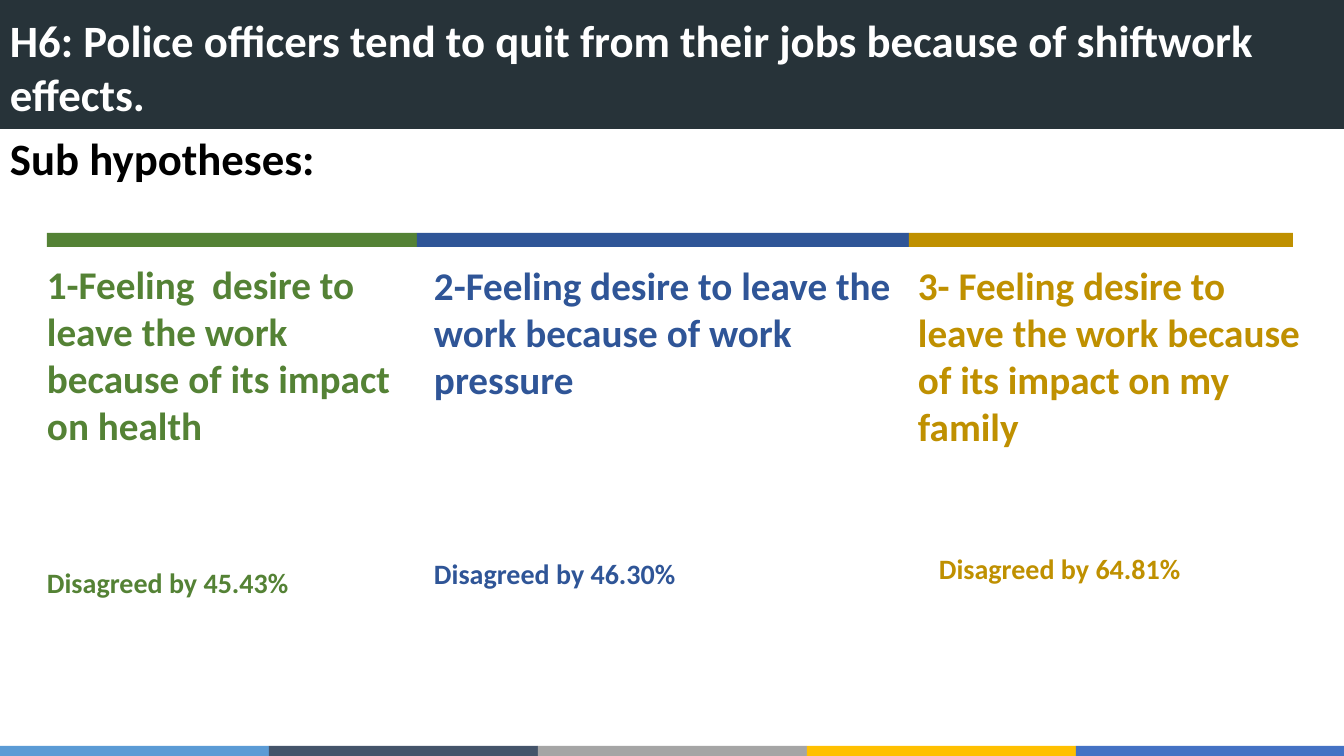
"""Builds the slide on hypothesis H6 and its three sub hypotheses."""
import pptx
import pptx.dml.color
import pptx.enum.shapes
import pptx.util

EMU_PER_PX = 12192000 / 1344


def add_bar(left, top, width, height, color):
    bar = slide.shapes.add_shape(
        pptx.enum.shapes.MSO_SHAPE.RECTANGLE,
        *[round(n * EMU_PER_PX) for n in (left, top, width, height)])
    bar.shadow.inherit = False
    bar.fill.solid()
    bar.fill.fore_color.rgb = pptx.dml.color.RGBColor.from_string(color)
    bar.line.fill.background()


def add_text(left, top, width, height, lines, color, wrap=True, inset=None):
    box = slide.shapes.add_textbox(
        *[round(n * EMU_PER_PX) for n in (left, top, width, height)])
    frame = box.text_frame
    frame.word_wrap = wrap
    if inset is not None:
        frame.margin_left = frame.margin_top = frame.margin_bottom = 0
        frame.margin_right = round(inset * EMU_PER_PX)
    frame.text = "\n".join(text for text, size, gap in lines)
    for paragraph, (text, size, gap) in zip(frame.paragraphs, lines):
        if gap:
            paragraph.space_before = pptx.util.Pt(gap)
        font = paragraph.runs[0].font
        font.name = "Calibri"
        font.size = pptx.util.Pt(size)
        font.bold = True
        font.color.rgb = pptx.dml.color.RGBColor.from_string(color)


GREEN, BLUE, GOLD = "548235", "2F5597", "BF9000"

deck = pptx.Presentation()
deck.slide_width = round(1344 * EMU_PER_PX)
deck.slide_height = round(756 * EMU_PER_PX)
slide = deck.slides.add_slide(deck.slide_layouts[6])

STRIPE_WIDTH = 269
for index, stripe_color in enumerate(["5B9BD5", "44546A", "A5A5A5", "FFC000", "4472C4"]):
    stripe_left = index * STRIPE_WIDTH
    add_bar(stripe_left, 746, min(STRIPE_WIDTH, 1344 - stripe_left), 10, stripe_color)

add_bar(0, 0, 1344, 129, "273339")
add_text(0, 8, 1344, 119,
         [("H6: Police officers tend to quit from their jobs because of shiftwork effects.", 32, 0)],
         "FFFFFF")
add_text(0, 126, 328, 65, [("Sub hypotheses:", 32, 0)], "000000", wrap=False)

for rule_left, rule_right, rule_color in [(47, 417, GREEN), (417, 909, BLUE), (909, 1293, GOLD)]:
    add_bar(rule_left, 233, rule_right - rule_left, 14, rule_color)

hypotheses = [
    (47, 260, 387, 200, GREEN,
     [("1-Feeling  desire to leave the work because of its impact on health", 28, 0),
      ("Disagreed by 45.43%", 20, 84)]),
    (434, 261, 475, 200, BLUE,
     [("2-Feeling desire to leave the work because of work pressure", 28, 0),
      ("Disagreed by 46.30%", 20, 110)]),
    (918, 261, 407, 250, GOLD,
     [("3- Feeling desire to leave the work because of its impact on my family", 28, 0)]),
]
for left, top, width, height, color, lines in hypotheses:
    add_text(left, top, width, height, lines, color, inset=13)

add_text(929, 547, 264, 44, [("Disagreed by 64.81%", 20, 0)], GOLD, wrap=False)

deck.save("out.pptx")
